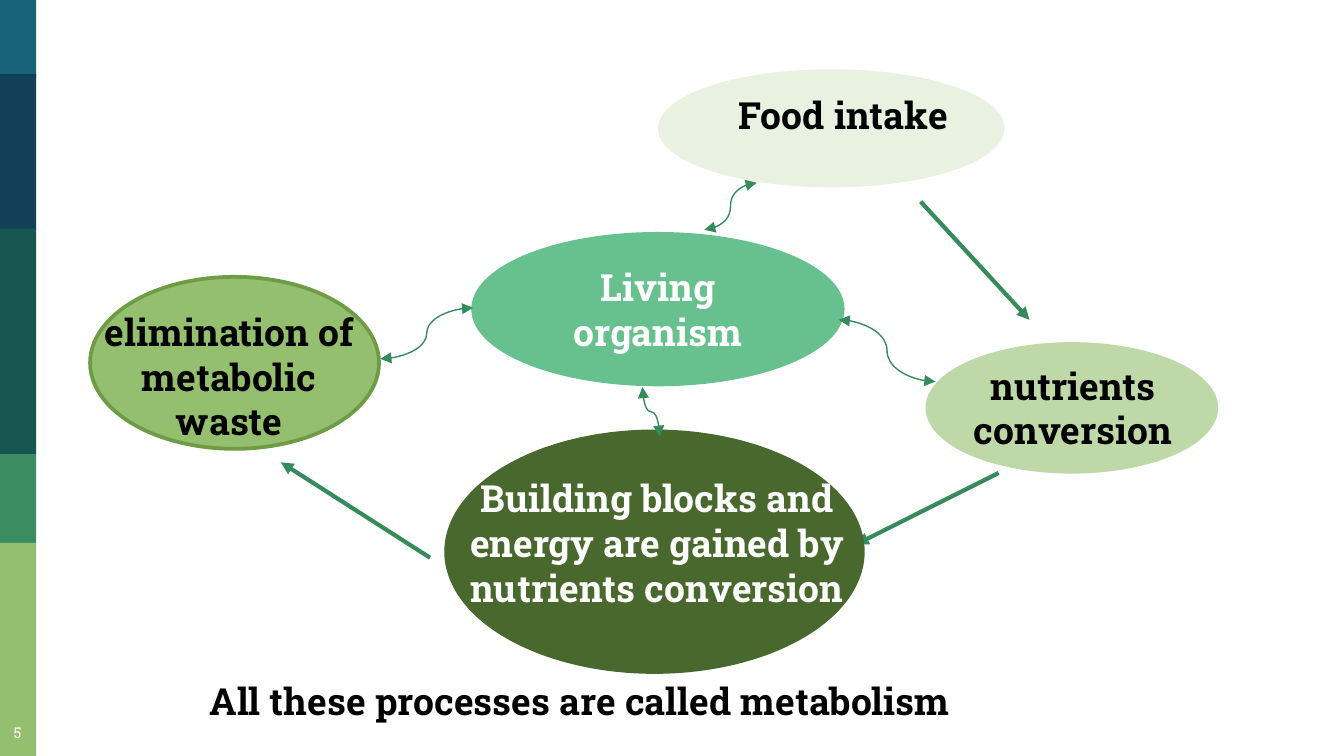
from lxml.etree import SubElement
from pptx import Presentation
from pptx.dml.color import RGBColor
from pptx.enum.shapes import MSO_CONNECTOR as Link, MSO_SHAPE as Shape
from pptx.enum.text import MSO_ANCHOR as Anchor, PP_ALIGN as Align
from pptx.oxml.ns import qn
from pptx.util import Inches, Pt

FONT = "Roboto Slab"
COLORS = {
    "blue": "18637B", "navy": "124057", "teal": "165751", "green": "3B8D61",
    "lime": "94BF6E", "lime_edge": "6E9C45", "mint": "67C18E", "sage": "BED8A7",
    "olive": "49682E", "pale": "E9F1E1", "arrow": "368B5D",
    "white": "FFFFFF", "black": "000000",
}


def color(name):
    return RGBColor.from_string(COLORS[name])


def write(shape, text, ink, size=20, bold=True, align=Align.CENTER,
          anchor=Anchor.TOP, inset=0.05):
    frame = shape.text_frame
    frame.word_wrap = True
    frame.vertical_anchor = anchor
    frame.margin_left = frame.margin_right = Inches(0.1)
    frame.margin_top = frame.margin_bottom = Inches(inset)
    frame.text = text
    para = frame.paragraphs[0]
    para.alignment = align
    font = para.runs[0].font
    font.name, font.size, font.bold = FONT, Pt(size), bold
    font.color.rgb = color(ink)


def add_label(page, box, text, ink, **style):
    label = page.shapes.add_textbox(*map(Inches, box))
    write(label, text, ink, **style)


def add_filled(page, kind, box, fill, edge=None):
    shape = page.shapes.add_shape(kind, *map(Inches, box))
    shape.shadow.inherit = False
    shape.fill.solid()
    shape.fill.fore_color.rgb = color(fill)
    if edge:
        shape.line.color.rgb = color(edge)
        shape.line.width = Pt(2)
    else:
        shape.line.fill.background()
    return shape


def add_arrow(page, start, end, kind=Link.STRAIGHT, width=2.25,
              ends=("tailEnd",), upright=False):
    (x1, y1), (x2, y2) = start, end
    if upright:
        mid_x, mid_y = (x1 + x2) / 2, (y1 + y2) / 2
        half_x, half_y = (x2 - x1) / 2, (y2 - y1) / 2
        x1, y1 = mid_x + half_y, mid_y - half_x
        x2, y2 = mid_x - half_y, mid_y + half_x
    arrow = page.shapes.add_connector(kind, *map(Inches, (x1, y1, x2, y2)))
    arrow.line.color.rgb = color("arrow")
    arrow.line.width = Pt(width)
    properties = arrow._element.spPr
    if upright:
        properties.find(qn("a:xfrm")).set("rot", str(270 * 60000))
    for name in ends:
        SubElement(properties.find(qn("a:ln")), qn(f"a:{name}"), type="triangle")
    SubElement(properties, qn("a:effectLst"))


def draw_sidebar(page, left, top, width, height):
    bands = [("blue", 0, 0.58), ("navy", 0.55, 1.16), ("teal", 1.7, 1.68),
             ("green", 3.38, 0.66), ("lime", 4.04, 1.59)]
    for fill, offset, depth in bands:
        add_filled(page, Shape.RECTANGLE, (left, top + offset, width, depth), fill)
    add_label(page, (left - 0.06, top + height - 0.35, 0.38, 0.35), "5", "white",
              size=8, bold=False, anchor=Anchor.MIDDLE, inset=0.1)


def draw_cycle(page, left, top):
    def point(x, y):
        return left + x, top + y

    def place(x, y, width, height):
        return *point(x, y), width, height

    add_arrow(page, point(6.83, 2.99), point(5.77, 3.52))

    organism = add_filled(page, Shape.OVAL, place(2.92, 1.21, 2.75, 1.12), "mint", "mint")
    write(organism, "Living organism", "white", anchor=Anchor.MIDDLE)

    stages = [
        ("elimination of metabolic waste", "black", "lime", "lime_edge",
         (0.07, 1.53, 2.15, 1.28), (0, 1.72, 2.21, 1.11)),
        ("nutrients conversion", "black", "sage", "sage",
         (6.3, 2.03, 2.15, 0.95), (6.52, 2.12, 1.73, 1.11)),
        ("Building blocks and energy are gained by nutrients conversion",
         "white", "olive", "olive",
         (2.72, 2.68, 3.1, 1.79), (2.66, 2.96, 3.26, 1.17)),
        ("Food intake", "black", "pale", "pale",
         (4.31, 0, 2.55, 0.85), (4.54, 0.11, 2.27, 0.44)),
    ]
    for text, ink, fill, edge, oval_box, text_box in stages:
        add_filled(page, Shape.OVAL, place(*oval_box), fill, edge)
        add_label(page, place(*text_box), text, ink)

    for start, end in [((6.25, 0.97), (7.06, 1.85)), ((2.6, 3.62), (1.49, 2.91))]:
        add_arrow(page, point(*start), point(*end))

    curves = [
        ((4.64, 1.18), (5.03, 0.83), False),
        ((4.18, 2.35), (4.31, 2.72), True),
        ((2.23, 2.14), (2.92, 1.76), False),
        ((5.64, 1.85), (6.36, 2.31), False),
    ]
    for start, end, upright in curves:
        add_arrow(page, point(*start), point(*end), Link.CURVE, 0.75,
                  ("headEnd", "tailEnd"), upright)


def main():
    deck = Presentation()
    deck.slide_width = Inches(10)
    deck.slide_height = deck.slide_width * 9 // 16
    page = deck.slides.add_slide(deck.slide_layouts[6])
    draw_sidebar(page, 0, 0, 0.27, deck.slide_height.inches)
    draw_cycle(page, 0.6, 0.53)
    add_label(page, (1.46, 5, 6.75, 0.44), "All these processes are called metabolism",
              "black", align=Align.LEFT)
    deck.save("out.pptx")


if __name__ == "__main__":
    main()
